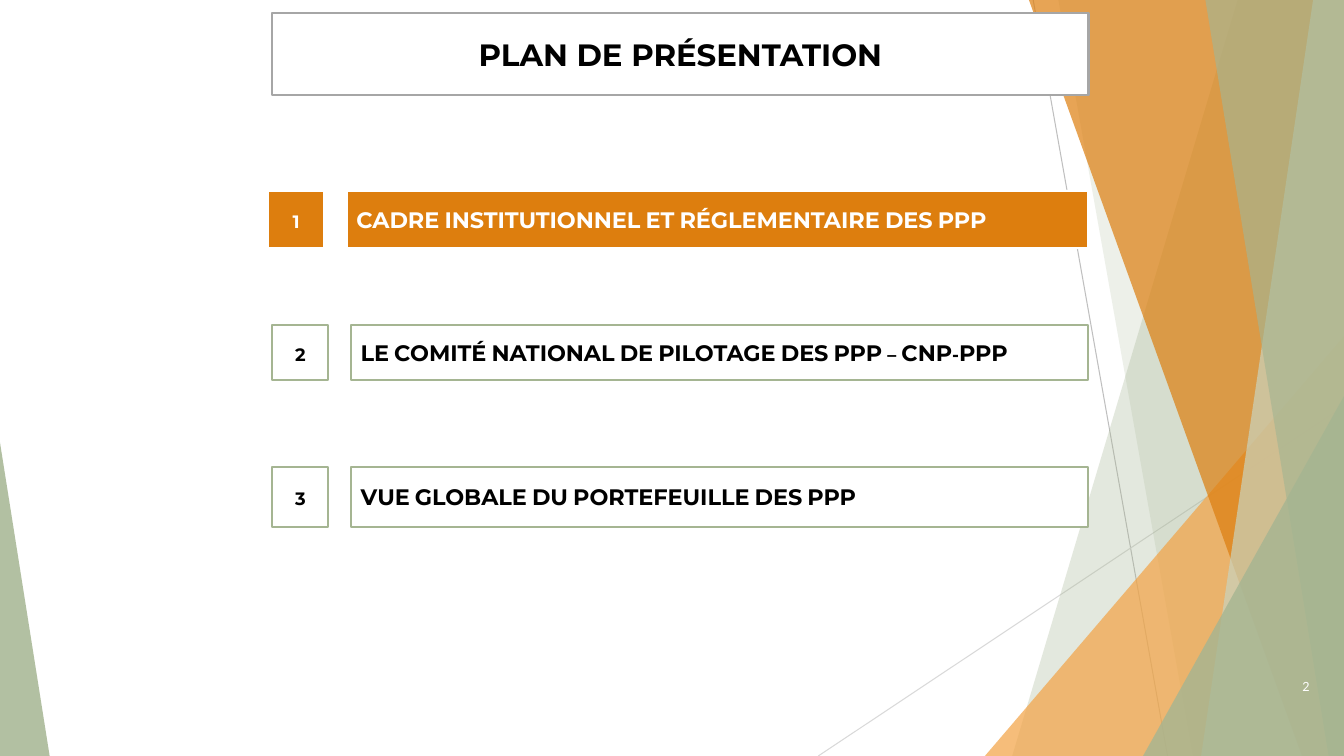
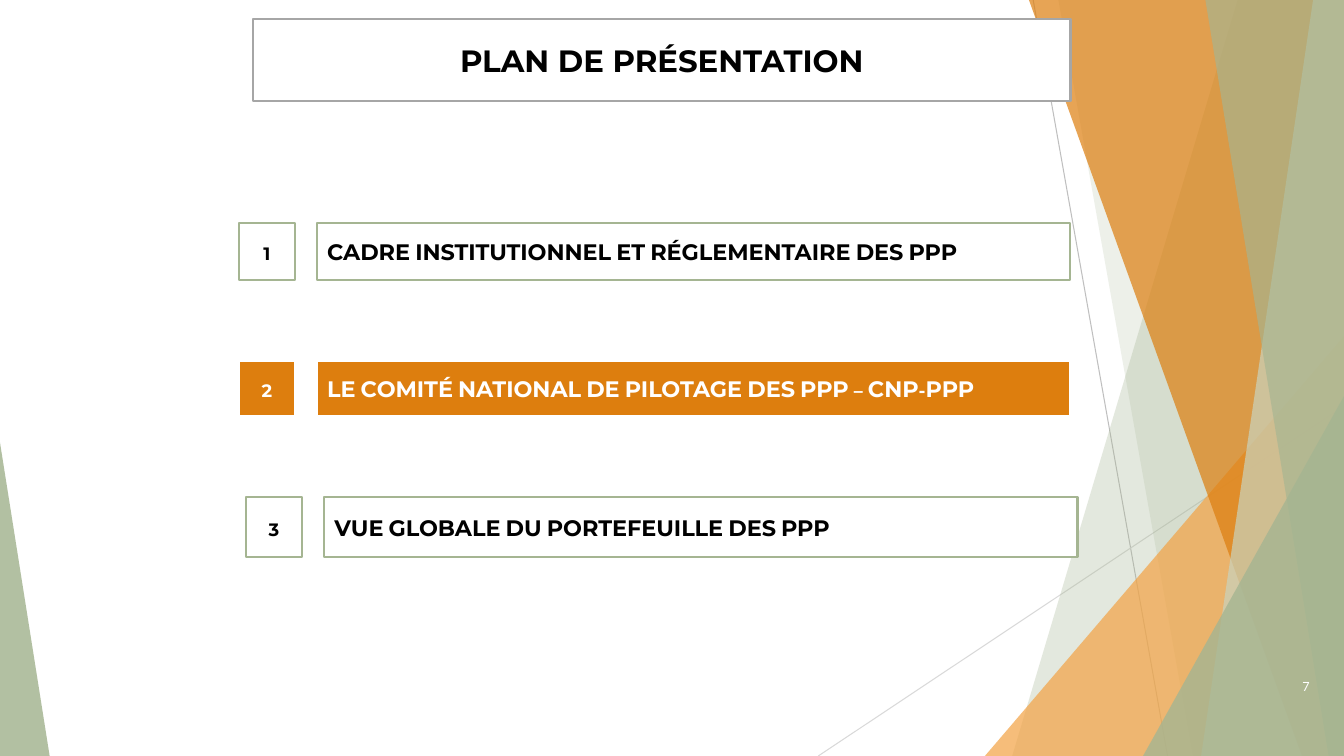
from lxml.etree import SubElement
from pptx import Presentation
from pptx.dml.color import RGBColor
from pptx.enum.shapes import MSO_CONNECTOR as CONNECTOR, MSO_SHAPE as SHAPE
from pptx.enum.text import MSO_ANCHOR as ANCHOR, PP_ALIGN as ALIGN
from pptx.oxml.ns import qn
from pptx.util import Pt

WIDTH, HEIGHT = 960, 540
COLOURS = {
    "white": "FFFFFF", "black": "000000", "sage": "A5B592", "pale_sage": "C9D3BE",
    "orange": "DD7E0E", "amber": "F3A447", "title_border": "A6A6A6",
    "steep_line": "BFBFBF", "shallow_line": "D9D9D9",
}
HEADING_FONT, NUMBER_FONT = "Montserrat", "Lato"
TITLE = "PLAN DE PRÉSENTATION"
TOPICS = [
    ("CADRE INSTITUTIONNEL ET RÉGLEMENTAIRE DES PPP", 40.5),
    ("LE COMITÉ NATIONAL DE PILOTAGE DES PPP – CNP-PPP", 39.5),
    ("VUE GLOBALE DU PORTEFEUILLE DES PPP", 43),
]
NUMBER_WIDTH, NUMBER_GAP = 40, 16
RAYS = [
    ((738, 0), (834, HEIGHT), "steep_line"),
    ((WIDTH, 290), (584.5, HEIGHT), "shallow_line"),
]
FACETS = [
    ("band", (884, 723), "sage", 30),
    ("band", (756, 852), "sage", 20),
    ("corner", (703.5, 240, 256.5, 300, 1), "amber", 72),
    ("band", (735, 929.5), "orange", 70),
    ("band", (938, 858), "pale_sage", 70),
    ("band", (861, 949), "sage", 65),
    ("corner", (816.5, 283, 143.5, 257, 1), "sage", 80),
    ("corner", (0, 316, 35.5, 224, 0), "sage", 85),
]
SLIDES = [
    {"page": 2, "title": (194.5, 9.4, 583), "current": 1,
     "rows": [(191.5, 136.5, 586), (194.5, 232, 583), (194.5, 333.5, 583)]},
    {"page": 7, "title": (180.7, 13.7, 584), "current": 2,
     "rows": [(170.6, 159.5, 594), (170.6, 258, 594), (175.7, 355, 594)]},
]


def rgb(name):
    """Look up a named colour."""
    return RGBColor.from_string(COLOURS[name])


def paint_facet(facet, colour, opacity):
    """Give a decorative shape a translucent fill and no outline."""
    facet.shadow.inherit = False
    facet.fill.solid()
    facet.fill.fore_color.rgb = rgb(colour)
    facet.line.fill.background()
    tint = facet._element.spPr.find(qn("a:solidFill"))[0]
    SubElement(tint, qn("a:alpha")).set("val", str(opacity * 1000))


def add_band(slide, top_x, bottom_x):
    """Draw a full-height band from a slanted edge to the right of the slide."""
    outline = slide.shapes.build_freeform(top_x, 0, scale=Pt(1))
    outline.add_line_segments([(WIDTH, 0), (WIDTH, HEIGHT), (bottom_x, HEIGHT)])
    return outline.convert_to_shape()


def add_corner(slide, left, top, width, height, apex):
    """Draw a right-angled triangle with its apex at one side."""
    corner = slide.shapes.add_shape(
        SHAPE.ISOSCELES_TRIANGLE, Pt(left), Pt(top), Pt(width), Pt(height))
    corner.adjustments[0] = apex
    return corner


def add_backdrop(slide):
    """Draw the thin rays and the overlapping facets."""
    for start, end, colour in RAYS:
        ray = slide.shapes.add_connector(
            CONNECTOR.STRAIGHT, *(Pt(value) for value in start + end))
        ray.line.color.rgb = rgb(colour)
        ray.line.width = Pt(0.75)
        SubElement(ray._element.spPr, qn("a:effectLst"))
    draw = {"band": add_band, "corner": add_corner}
    for kind, geometry, colour, opacity in FACETS:
        paint_facet(draw[kind](slide, *geometry), colour, opacity)


def write(holder, text, size, colour, align, font=HEADING_FONT, bold=True, small_caps=False):
    """Write one vertically centred line of text."""
    frame = holder.text_frame
    frame.word_wrap = True
    frame.vertical_anchor = ANCHOR.MIDDLE
    paragraph = frame.paragraphs[0]
    paragraph.alignment = align
    run = paragraph.add_run()
    run.text = text
    run.font.name = font
    run.font.size = Pt(size)
    run.font.bold = bold
    run.font.color.rgb = rgb(colour)
    if small_caps:
        run._r.get_or_add_rPr().set("cap", "small")


def add_panel(slide, box, fill, border):
    """Draw a bordered rectangle."""
    panel = slide.shapes.add_shape(SHAPE.RECTANGLE, *(Pt(value) for value in box))
    panel.shadow.inherit = False
    panel.fill.solid()
    panel.fill.fore_color.rgb = rgb(fill)
    panel.line.color.rgb = rgb(border)
    panel.line.width = Pt(1.5)
    return panel


def add_title(slide, left, top, width):
    """Place the framed slide title."""
    panel = add_panel(slide, (left, top, width, 58.5), "white", "title_border")
    write(panel, TITLE, 22, "black", ALIGN.CENTER)


def add_topic_row(slide, box, number, topic, current):
    """Place a numbered topic, highlighted when it is the current one."""
    left, top, width, height = box
    fill, border, ink = ("orange", "white", "white") if current else ("white", "sage", "black")
    indent = NUMBER_WIDTH + NUMBER_GAP
    cells = [
        (left + indent, width - indent, topic, ALIGN.LEFT),
        (left, NUMBER_WIDTH, str(number), ALIGN.CENTER),
    ]
    for cell_left, cell_width, text, align in cells:
        panel = add_panel(slide, (cell_left, top, cell_width, height), fill, border)
        write(panel, text, 16, ink, align, small_caps=True)


def add_page_number(slide, page):
    """Place the page number at the lower right."""
    footer = slide.shapes.add_textbox(Pt(888.5), Pt(476), Pt(54), Pt(29))
    write(footer, str(page), 9, "white", ALIGN.RIGHT, font=NUMBER_FONT, bold=False)


def add_plan_slide(deck, plan):
    """Build one agenda slide."""
    slide = deck.slides.add_slide(deck.slide_layouts[6])
    add_backdrop(slide)
    add_title(slide, *plan["title"])
    for number, (row, (topic, height)) in enumerate(zip(plan["rows"], TOPICS), 1):
        add_topic_row(slide, (*row, height), number, topic, number == plan["current"])
    add_page_number(slide, plan["page"])


def main():
    """Build and save the presentation."""
    deck = Presentation()
    deck.slide_width, deck.slide_height = Pt(WIDTH), Pt(HEIGHT)
    for plan in SLIDES:
        add_plan_slide(deck, plan)
    deck.save("out.pptx")


if __name__ == "__main__":
    main()
